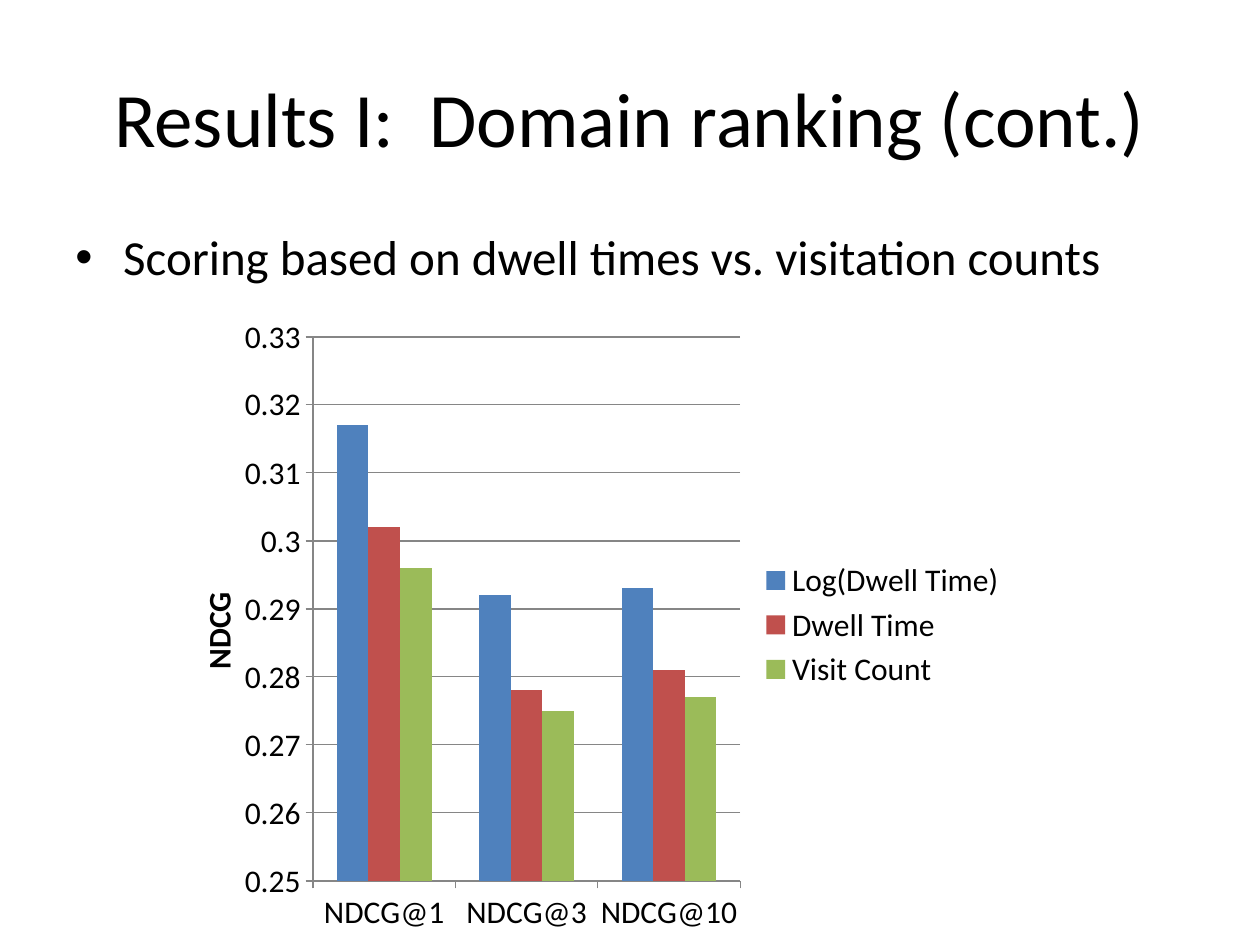
import pptx
import pptx.chart.data
import pptx.dml.color
import pptx.enum.chart
import pptx.enum.text
import pptx.oxml.ns
import pptx.oxml.xmlchemy
import pptx.util

Inches = pptx.util.Inches
Pt = pptx.util.Pt
RGBColor = pptx.dml.color.RGBColor
qn = pptx.oxml.ns.qn
OxmlElement = pptx.oxml.xmlchemy.OxmlElement

BLACK = RGBColor(0x00, 0x00, 0x00)
GRAY = RGBColor(0x86, 0x86, 0x86)
BLUE = RGBColor(0x4F, 0x81, 0xBD)
RED = RGBColor(0xC0, 0x50, 0x4D)
GREEN = RGBColor(0x9B, 0xBB, 0x59)
FONT = "Calibri"

CATEGORIES = ["NDCG@1", "NDCG@3", "NDCG@10"]
SERIES = [
    ("Log(Dwell Time)", [0.317, 0.292, 0.293], BLUE),
    ("Dwell Time", [0.302, 0.278, 0.281], RED),
    ("Visit Count", [0.296, 0.275, 0.277], GREEN),
]


def set_attrs(target, values):
    for name, value in values.items():
        setattr(target, name, value)


def set_font(font, size, **extra):
    set_attrs(font, {"name": FONT, "size": Pt(size), **extra})
    font.color.rgb = BLACK


def add_text(s, box, text, size, anchor, align):
    sp = s.shapes.add_textbox(*box)
    tf = sp.text_frame
    set_attrs(tf, {"word_wrap": True, "vertical_anchor": anchor})
    p = tf.paragraphs[0]
    p.alignment = align
    r = p.add_run()
    r.text = text
    set_font(r.font, size)
    return p


def add_title(s, box):
    add_text(s, box, "Results I:  Domain ranking (cont.)", 44,
             pptx.enum.text.MSO_ANCHOR.MIDDLE, pptx.enum.text.PP_ALIGN.CENTER)


def add_bullet(s, box):
    p = add_text(s, box, "Scoring based on dwell times vs. visitation counts", 28,
                 pptx.enum.text.MSO_ANCHOR.TOP, pptx.enum.text.PP_ALIGN.LEFT)
    p.space_before = Pt(5.6)
    pPr = p._p.get_or_add_pPr()
    pPr.set("marL", str(Inches(0.38)))
    pPr.set("indent", str(-Inches(0.38)))
    for tag, key, value in (("a:buFont", "typeface", "Arial"), ("a:buChar", "char", "•")):
        pPr.append(OxmlElement(tag))
        pPr[-1].set(key, value)


def set_layout(parent, index, settings):
    for old in parent.findall(qn("c:layout")):
        parent.remove(old)
    layout = OxmlElement("c:layout")
    manual = OxmlElement("c:manualLayout")
    layout.append(manual)
    for name, value in settings.items():
        manual.append(OxmlElement(f"c:{name}"))
        manual[-1].set("val", str(value))
    parent.insert(index, layout)


def add_ndcg_chart(s, box):
    data = pptx.chart.data.CategoryChartData()
    data.categories = CATEGORIES
    for name, values, color in SERIES:
        data.add_series(name, values)
    chart = s.shapes.add_chart(
        pptx.enum.chart.XL_CHART_TYPE.COLUMN_CLUSTERED, *box, data).chart
    set_attrs(chart, {"has_title": False, "has_legend": True})
    set_font(chart.font, 18)
    set_attrs(chart.legend, {
        "position": pptx.enum.chart.XL_LEGEND_POSITION.RIGHT,
        "include_in_layout": False,
    })

    plot = chart.plots[0]
    set_attrs(plot, {"gap_width": 150, "overlap": 0, "vary_by_categories": False})
    for series, (name, values, color) in zip(plot.series, SERIES):
        series.format.fill.solid()
        series.format.fill.fore_color.rgb = color

    value_axis = chart.value_axis
    set_attrs(value_axis, {
        "minimum_scale": 0.25, "maximum_scale": 0.33, "major_unit": 0.01,
        "has_major_gridlines": True, "has_title": True,
    })
    set_attrs(value_axis.tick_labels, {"number_format": "General",
                                       "number_format_is_linked": False})
    for axis in (chart.category_axis, value_axis):
        axis.major_tick_mark = pptx.enum.chart.XL_TICK_MARK.OUTSIDE
    for part in (chart.category_axis, value_axis, value_axis.major_gridlines):
        part.format.line.color.rgb = GRAY
        part.format.line.width = Pt(0.75)

    tf = value_axis.axis_title.text_frame
    r = tf.paragraphs[0].add_run()
    r.text = "NDCG"
    set_font(r.font, 18, bold=True)
    bodyPr = tf._txBody.find(qn("a:bodyPr"))
    bodyPr.set("rot", "-5400000")
    bodyPr.set("vert", "horz")

    edges = {"xMode": "edge", "yMode": "edge"}
    set_layout(value_axis.axis_title._element, 1, {**edges, "x": 0.05, "y": 0.44})
    set_layout(chart._chartSpace.chart.plotArea, 0, {
        "layoutTarget": "inner", **edges, "x": 0.19, "y": 0.05, "w": 0.49, "h": 0.85})


def main():
    prs = pptx.Presentation()
    set_attrs(prs, {"slide_width": Inches(10), "slide_height": Inches(7.5)})
    s = prs.slides.add_slide(prs.slide_layouts[6])
    add_title(s, [Inches(v) for v in (0.5, 0.3, 9, 1.25)])
    add_bullet(s, [Inches(v) for v in (0.5, 1.75, 9, 4.95)])
    add_ndcg_chart(s, [Inches(v) for v in (1.17, 2.42, 6.92, 5.08)])
    prs.save("out.pptx")


if __name__ == "__main__":
    main()
